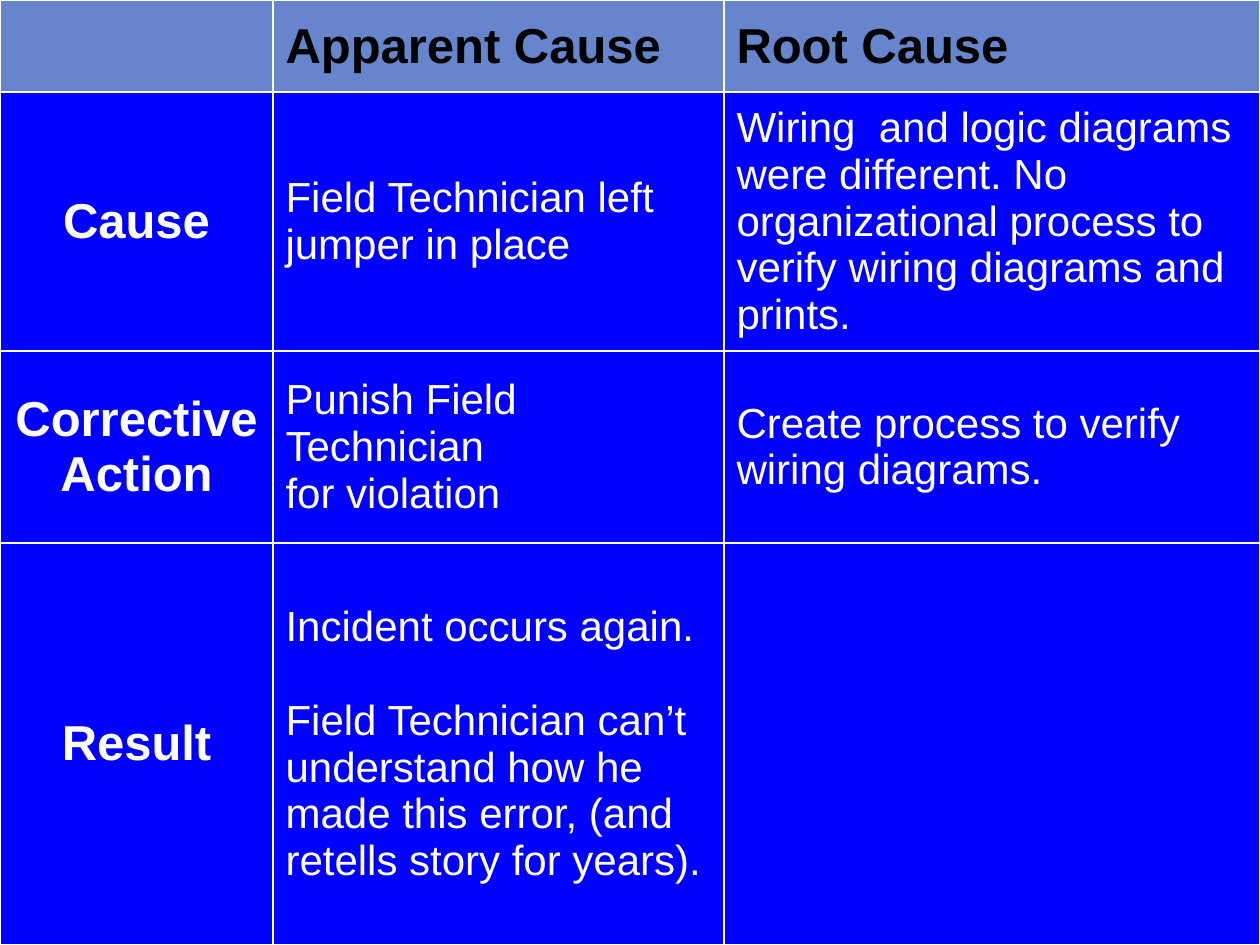
from lxml.etree import SubElement
from pptx import Presentation
from pptx.dml.color import RGBColor
from pptx.enum.text import MSO_ANCHOR, PP_ALIGN
from pptx.oxml.ns import qn
from pptx.util import Emu, Pt

COLORS = {"background": "0000FF", "header": "6685CC", "heading": "000000",
          "text": "FFFFFF", "border": "FFFFFF"}
COLUMN_WIDTHS = [273, 451, 536]
ROW_HEIGHTS = [92, 259, 192, 402]

# Each cell is a list of paragraphs
ROWS = [
    [[], ["Apparent Cause"], ["Root Cause"]],
    [["Cause"],
     ["Field Technician left jumper in place"],
     ["Wiring  and logic diagrams were different. No organizational process "
      "to verify wiring diagrams and prints."]],
    [["Corrective Action"],
     ["Punish Field Technician", "for violation"],
     ["Create process to verify wiring diagrams."]],
    [["Result"],
     ["Incident occurs again.",
      "Field Technician can’t understand how he made this error, "
      "(and retells story for years)."],
     []],
]
SPACED_ROW = 3  # its paragraphs stand one line apart


def px(length):
    return Emu(round(length * 914400 / 126))


class SlideBuilder:
    font_name = "Arial"
    heading_size = Pt(28)
    body_size = Pt(24)
    line_gap = Pt(27)

    def __init__(self, slide):
        self.slide = slide

    def background(self, color):
        fill = self.slide.background.fill
        fill.solid()
        fill.fore_color.rgb = RGBColor.from_string(COLORS[color])

    def table(self, rows, widths, heights):
        frame = self.slide.shapes.add_table(
            len(rows), len(widths), 0, 0, px(sum(widths)), px(sum(heights)))
        table = frame.table
        for column, width in zip(table.columns, widths):
            column.width = px(width)
        for row, height in zip(table.rows, heights):
            row.height = px(height)
        for row_index, row in enumerate(rows):
            for column_index, paragraphs in enumerate(row):
                cell = table.cell(row_index, column_index)
                self.borders(cell)
                self.cell(cell, paragraphs, row_index, column_index)

    def borders(self, cell):
        properties = cell._tc.get_or_add_tcPr()
        for side in ("lnL", "lnR", "lnT", "lnB"):
            line = SubElement(properties, qn(f"a:{side}"), w=str(Pt(1)))
            fill = SubElement(line, qn("a:solidFill"))
            SubElement(fill, qn("a:srgbClr"), val=COLORS["border"])

    def cell(self, cell, paragraphs, row_index, column_index):
        is_header = row_index == 0
        is_label = column_index == 0
        cell.fill.solid()
        cell.fill.fore_color.rgb = RGBColor.from_string(
            COLORS["header" if is_header else "background"])
        cell.vertical_anchor = MSO_ANCHOR.MIDDLE
        cell.text_frame.text = "\n".join(paragraphs)
        for index, paragraph in enumerate(cell.text_frame.paragraphs):
            paragraph.alignment = PP_ALIGN.CENTER if is_label else PP_ALIGN.LEFT
            if row_index == SPACED_ROW and index > 0:
                paragraph.space_before = self.line_gap
            for run in paragraph.runs:
                font = run.font
                font.name = self.font_name
                font.bold = is_header or is_label
                font.size = self.heading_size if font.bold else self.body_size
                font.color.rgb = RGBColor.from_string(
                    COLORS["heading" if is_header else "text"])


def main():
    presentation = Presentation()
    presentation.slide_width = px(1260)
    presentation.slide_height = px(945)
    slide = presentation.slides.add_slide(presentation.slide_layouts[6])
    builder = SlideBuilder(slide)

    # Blue page with the cause comparison filling it
    builder.background("background")
    builder.table(ROWS, COLUMN_WIDTHS, ROW_HEIGHTS)
    presentation.save("out.pptx")


if __name__ == "__main__":
    main()
